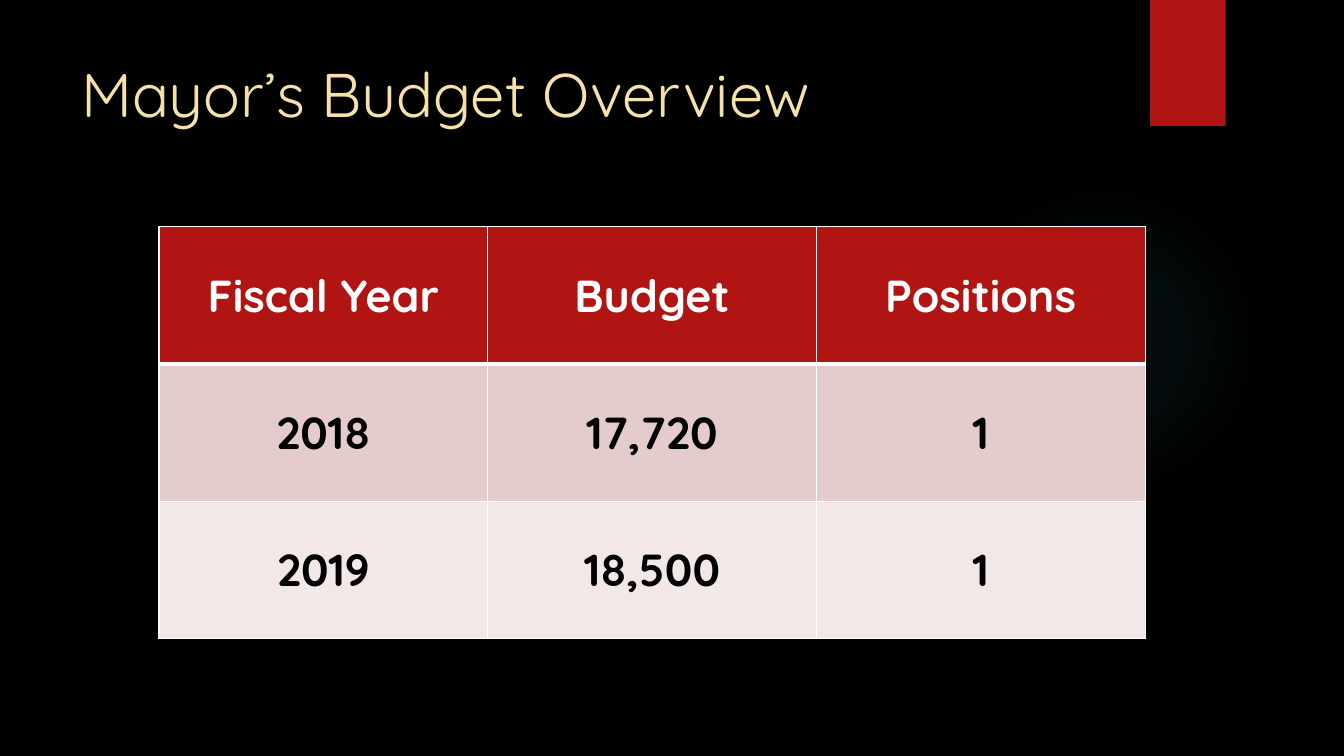
from dataclasses import dataclass

import pptx
import pptx.dml.color
import pptx.enum.shapes
import pptx.enum.text
import pptx.oxml
import pptx.oxml.ns
import pptx.util
from lxml import etree

Pt = pptx.util.Pt
ANCHOR = pptx.enum.text.MSO_ANCHOR
SHAPE = pptx.enum.shapes.MSO_SHAPE
NS = pptx.oxml.ns.nsdecls("a")


@dataclass(frozen=True)
class Theme:
    font: str = "Quicksand"
    title_size: float = 44
    table_size: float = 32
    background: str = "000000"
    title: str = "F5E2A9"
    accent: str = "B01513"
    glow: str = "50B9C1"
    border: str = "FFFFFF"


@dataclass(frozen=True)
class Area:
    left: float
    top: float
    width: float
    height: float

    def lengths(self) -> tuple:
        return Pt(self.left), Pt(self.top), Pt(self.width), Pt(self.height)


@dataclass(frozen=True)
class BudgetRow:
    values: tuple[str, str, str]
    fill: str
    ink: str
    rule_below: float = 1


THEME = Theme()
TITLE_AREA = Area(51.1, 36, 740.2, 110.2)
GLOW_AREA = Area(677.5, 131.8, 221.8, 221.8)
RIBBON_AREA = Area(821.5, 0, 54, 90)
TABLE_AREA = Area(113.6, 162, 704.4, 294.3)
GLOW_STOPS = ((0, 7), (36, 6), (69, 0))  # position and opacity, in percent
BUDGET_ROWS = (
    BudgetRow(("Fiscal Year", "Budget", "Positions"), THEME.accent, "FFFFFF", 3),
    BudgetRow(("2018", "17,720", "1"), "E4CCCC", "000000"),
    BudgetRow(("2019", "18,500", "1"), "F2E8E7", "000000"),
)


def rgb(value: str) -> pptx.dml.color.RGBColor:
    return pptx.dml.color.RGBColor.from_string(value)


def add_span(para, text: str, size: float, color: str, bold: bool = False) -> None:
    span = para.add_run()
    span.text = text
    span.font.name = THEME.font
    span.font.size = Pt(size)
    span.font.bold = bold
    span.font.color.rgb = rgb(color)


def add_plain_shape(page, kind, area: Area):
    shape = page.shapes.add_shape(kind, *area.lengths())
    shape.shadow.inherit = False
    shape.line.fill.background()
    return shape


def add_glow(page) -> None:
    glow = add_plain_shape(page, SHAPE.OVAL, GLOW_AREA)
    stops = "".join(
        f'<a:gs pos="{position * 1000}"><a:srgbClr val="{THEME.glow}">'
        f'<a:alpha val="{opacity * 1000}"/></a:srgbClr></a:gs>'
        for position, opacity in GLOW_STOPS
    )
    gradient = pptx.oxml.parse_xml(
        f'<a:gradFill {NS}><a:gsLst>{stops}</a:gsLst><a:path path="circle">'
        '<a:fillToRect l="50000" t="50000" r="50000" b="50000"/></a:path></a:gradFill>'
    )
    glow.element.spPr.find(pptx.oxml.ns.qn("a:prstGeom")).addnext(gradient)


def add_ribbon(page) -> None:
    ribbon = add_plain_shape(page, SHAPE.RECTANGLE, RIBBON_AREA)
    ribbon.fill.solid()
    ribbon.fill.fore_color.rgb = rgb(THEME.accent)
    effects = ribbon.element.spPr.find(pptx.oxml.ns.qn("a:effectLst"))
    effects.append(pptx.oxml.parse_xml(
        f'<a:outerShdw {NS} blurRad="{Pt(3)}" dist="{Pt(2)}" dir="5400000" rotWithShape="0">'
        '<a:srgbClr val="000000"><a:alpha val="45000"/></a:srgbClr></a:outerShdw>'
    ))


def format_title(page, text: str) -> None:
    title = page.shapes.title
    title.left, title.top, title.width, title.height = TITLE_AREA.lengths()
    frame = title.text_frame
    frame.word_wrap = True
    frame.vertical_anchor = ANCHOR.TOP
    para = frame.paragraphs[0]
    para.alignment = pptx.enum.text.PP_ALIGN.LEFT
    add_span(para, text, THEME.title_size, THEME.title)


def set_borders(cell, top: float, bottom: float) -> None:
    properties = cell._tc.get_or_add_tcPr()
    widths = {"lnL": 1, "lnR": 1, "lnT": top, "lnB": bottom}
    for position, (side, width) in enumerate(widths.items()):
        line = etree.fromstring(
            f'<a:{side} {NS} w="{Pt(width)}"><a:solidFill>'
            f'<a:srgbClr val="{THEME.border}"/></a:solidFill></a:{side}>'
        )
        properties.insert(position, line)


def add_budget_table(page, rows: tuple[BudgetRow, ...]) -> None:
    column_count = len(rows[0].values)
    table = page.shapes.add_table(len(rows), column_count, *TABLE_AREA.lengths()).table
    for column in table.columns:
        column.width = Pt(TABLE_AREA.width / column_count)
    rule_above = 1
    for row_index, row in enumerate(rows):
        table.rows[row_index].height = Pt(TABLE_AREA.height / len(rows))
        for column_index, value in enumerate(row.values):
            cell = table.cell(row_index, column_index)
            cell.vertical_anchor = ANCHOR.MIDDLE
            cell.fill.solid()
            cell.fill.fore_color.rgb = rgb(row.fill)
            set_borders(cell, rule_above, row.rule_below)
            para = cell.text_frame.paragraphs[0]
            para.alignment = pptx.enum.text.PP_ALIGN.CENTER
            add_span(para, value, THEME.table_size, row.ink, bold=True)
        rule_above = row.rule_below


def main() -> None:
    deck = pptx.Presentation()
    deck.slide_width, deck.slide_height = Pt(960), Pt(540)
    page = deck.slides.add_slide(deck.slide_layouts[5])
    page.background.fill.solid()
    page.background.fill.fore_color.rgb = rgb(THEME.background)

    # Backdrop
    add_glow(page)
    add_ribbon(page)

    # Content
    format_title(page, "Mayor’s Budget Overview")
    add_budget_table(page, BUDGET_ROWS)

    deck.save("out.pptx")


if __name__ == "__main__":
    main()
